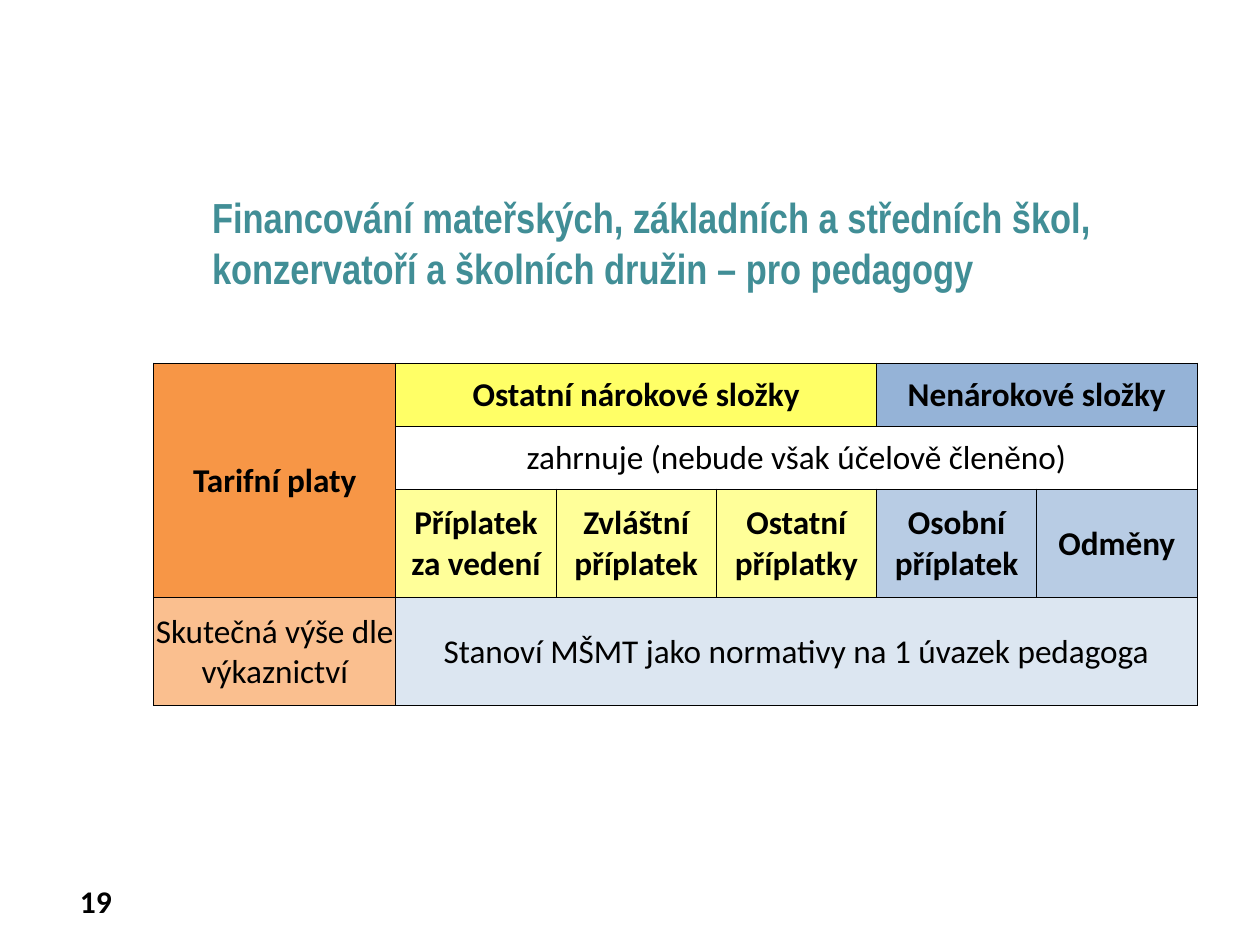
from dataclasses import dataclass

from lxml.etree import SubElement
from pptx import Presentation
from pptx.dml.color import RGBColor
from pptx.enum.text import MSO_ANCHOR, PP_ALIGN
from pptx.oxml.ns import qn
from pptx.util import Pt


@dataclass(frozen=True)
class Theme:
    """Colours, fonts and type sizes of the slide."""
    ink: str = "000000"
    teal: str = "418E96"
    orange: str = "F79646"
    light_orange: str = "FABF8F"
    yellow: str = "FFFF66"
    light_yellow: str = "FFFF99"
    blue: str = "95B3D7"
    light_blue: str = "B8CCE4"
    pale_blue: str = "DCE6F1"
    title_font: str = "Arial Narrow"
    body_font: str = "Calibri"
    title_size: float = 24
    cell_size: float = 19
    number_size: float = 18
    border: float = 0.5


THEME = Theme()

# row, column, rows spanned, columns spanned, text, bold, fill
CELLS = [
    (0, 0, 3, 1, "Tarifní platy", True, THEME.orange),
    (0, 1, 1, 3, "Ostatní nárokové složky", True, THEME.yellow),
    (0, 4, 1, 2, "Nenárokové složky", True, THEME.blue),
    (1, 1, 1, 5, "zahrnuje (nebude však účelově členěno)", False, None),
    (2, 1, 1, 1, "Příplatek za vedení", True, THEME.light_yellow),
    (2, 2, 1, 1, "Zvláštní příplatek", True, THEME.light_yellow),
    (2, 3, 1, 1, "Ostatní příplatky", True, THEME.light_yellow),
    (2, 4, 1, 1, "Osobní příplatek", True, THEME.light_blue),
    (2, 5, 1, 1, "Odměny", True, THEME.light_blue),
    (3, 0, 1, 1, "Skutečná výše dle výkaznictví", False, THEME.light_orange),
    (3, 1, 1, 5, "Stanoví MŠMT jako normativy na 1 úvazek pedagoga", False, THEME.pale_blue),
]


def write(tf, text, size, font=THEME.body_font, color=THEME.ink, bold=True,
          align=PP_ALIGN.LEFT):
    """Write one formatted paragraph into a text frame."""
    tf.word_wrap = True
    p = tf.paragraphs[0]
    p.alignment = align
    r = p.add_run()
    r.text = text
    r.font.name = font
    r.font.size = Pt(size)
    r.font.bold = bold
    r.font.color.rgb = RGBColor.from_string(color)


def add_text(s, box, text, indent=0, **fmt):
    """Add a text box whose text starts at an extra left indent."""
    tf = s.shapes.add_textbox(*map(Pt, box)).text_frame
    tf.margin_left = Pt(7.2 + indent)
    write(tf, text, **fmt)


def set_borders(cell):
    """Draw a thin line on all four sides of a cell."""
    tc_pr = cell._tc.get_or_add_tcPr()
    for side in ("lnL", "lnR", "lnT", "lnB"):
        ln = SubElement(tc_pr, qn(f"a:{side}"), w=str(Pt(THEME.border)))
        fill = SubElement(ln, qn("a:solidFill"))
        SubElement(fill, qn("a:srgbClr"), val=THEME.ink)


def add_pay_table(s, box):
    """Add the table of pay components, filling the given box."""
    left, top, width, height = box
    table = s.shapes.add_table(4, 6, *map(Pt, box)).table
    table.first_row = table.horz_banding = False
    first_col, short_row = 138.4, 36
    tall_row = (height - 2 * short_row) / 2
    for i, col in enumerate(table.columns):
        col.width = Pt(first_col if i == 0 else (width - first_col) / 5)
    for i, row in enumerate(table.rows):
        row.height = Pt(short_row if i < 2 else tall_row)
    for cell in table.iter_cells():
        set_borders(cell)
    for row, col, rows, cols, text, bold, color in CELLS:
        cell = table.cell(row, col)
        if rows * cols > 1:
            cell.merge(table.cell(row + rows - 1, col + cols - 1))
        cell.vertical_anchor = MSO_ANCHOR.MIDDLE
        cell.margin_left = cell.margin_right = cell.margin_top = Pt(0.7)
        cell.margin_bottom = 0
        if color:
            cell.fill.solid()
            cell.fill.fore_color.rgb = RGBColor.from_string(color)
        else:
            cell.fill.background()
        write(cell.text_frame, text, THEME.cell_size, bold=bold, align=PP_ALIGN.CENTER)


def main():
    """Build and save the slide."""
    prs = Presentation()
    prs.slide_width, prs.slide_height = Pt(720), Pt(540)
    s = prs.slides.add_slide(prs.slide_layouts[6])
    add_text(s, (20, 500.4, 51, 29), "19", size=THEME.number_size, align=PP_ALIGN.RIGHT)
    add_text(s, (82, 106, 595.5, 79),
             "Financování mateřských, základních a středních škol, "
             "konzervatoří a školních družin – pro pedagogy",
             indent=32, size=THEME.title_size, font=THEME.title_font, color=THEME.teal)
    add_pay_table(s, (87.8, 207.4, 596.2, 195.8))
    prs.save("out.pptx")


if __name__ == "__main__":
    main()
